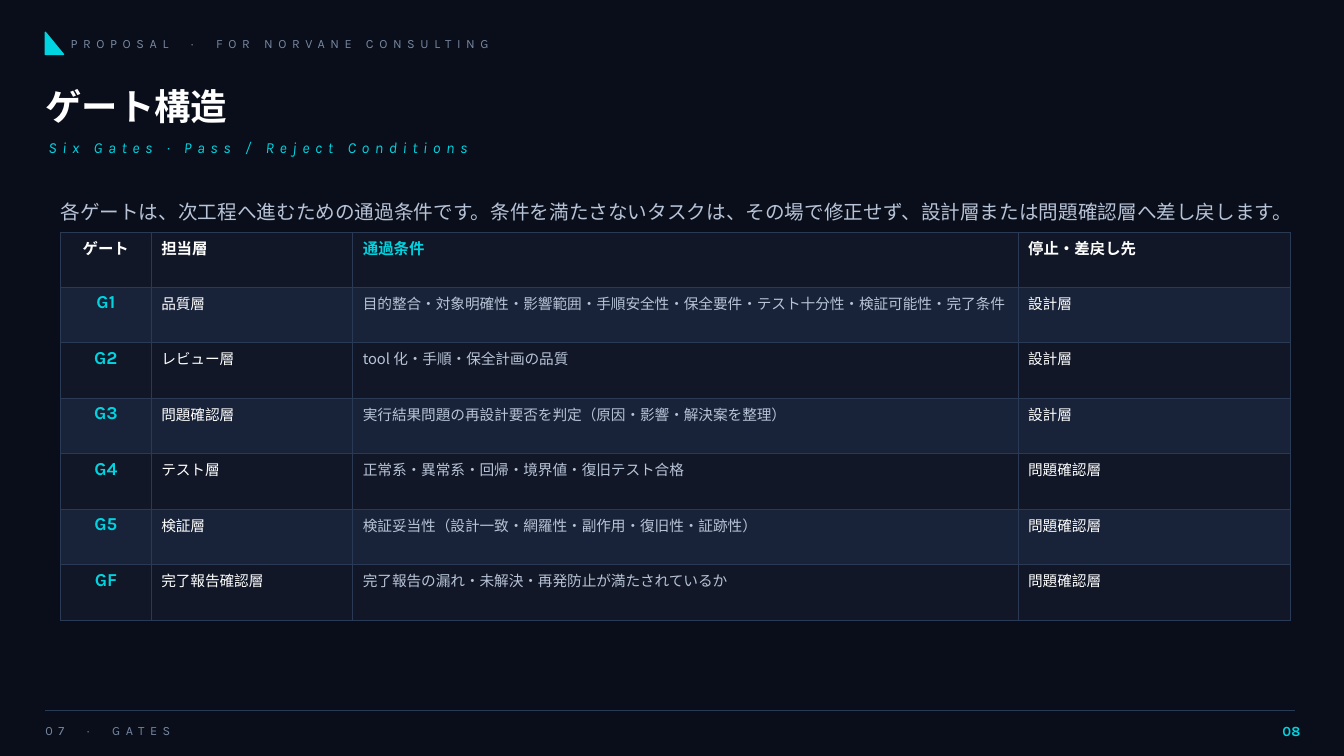
from dataclasses import dataclass, replace

from lxml.etree import SubElement
from pptx import Presentation
from pptx.dml.color import RGBColor
from pptx.enum.shapes import MSO_CONNECTOR, MSO_SHAPE
from pptx.enum.text import MSO_ANCHOR, MSO_AUTO_SIZE, PP_ALIGN
from pptx.oxml.ns import qn
from pptx.slide import Slide
from pptx.table import _Cell as Cell
from pptx.text.text import TextFrame, _Paragraph as Paragraph
from pptx.util import Pt

NIGHT = RGBColor(0x0A, 0x0E, 0x1A)
PANEL = RGBColor(0x11, 0x17, 0x26)
BAND = RGBColor(0x18, 0x22, 0x38)
RULE = RGBColor(0x2A, 0x3A, 0x55)
CYAN = RGBColor(0x00, 0xD4, 0xE0)
WHITE = RGBColor(0xFF, 0xFF, 0xFF)
MIST = RGBColor(0xB7, 0xC3, 0xD6)
SLATE = RGBColor(0x77, 0x87, 0xA0)

LATIN = "Karla"
CJK = "Noto Sans CJK JP"


@dataclass(frozen=True)
class Style:
    size: float
    font: str
    color: RGBColor
    bold: bool = False
    italic: bool = False
    spacing: float = 0
    align: PP_ALIGN = PP_ALIGN.LEFT


@dataclass(frozen=True)
class Label:
    text: str
    left: float
    top: float
    width: float
    height: float
    style: Style


KICKER = Style(9, LATIN, SLATE, spacing=4)
HEADER = Style(11, CJK, WHITE, bold=True)
BODY = Style(10.5, CJK, WHITE)
GATE = Style(13, LATIN, CYAN, bold=True, align=PP_ALIGN.CENTER)

TITLE = Label("ゲート構造", 32.4, 54, 864, 43.2, Style(26, CJK, WHITE, bold=True))
LABELS = [
    Label("PROPOSAL  ·  FOR NORVANE CONSULTING", 50.4, 19.44, 432, 23.04, KICKER),
    Label("Six Gates · Pass / Reject Conditions", 34.56, 93.6, 864, 23.04,
          Style(11, LATIN, CYAN, italic=True, spacing=4)),
    Label("各ゲートは、次工程へ進むための通過条件です。条件を満たさないタスクは、"
          "その場で修正せず、設計層または問題確認層へ差し戻します。",
          43.2, 133.2, 878.4, 36, Style(14, CJK, MIST)),
    Label("07  ·  GATES", 32.4, 511.2, 648, 21.6, KICKER),
    Label("08", 896.4, 511.2, 32.4, 21.6,
          Style(10, LATIN, CYAN, bold=True, align=PP_ALIGN.RIGHT)),
]

TABLE_LEFT, TABLE_TOP, ROW_HEIGHT = 43.2, 165.6, 39.6
COLUMN_WIDTHS = [64.8, 144, 475.2, 194.4]
HEADER_STYLES = [replace(HEADER, align=PP_ALIGN.CENTER), HEADER,
                 replace(HEADER, color=CYAN), HEADER]
BODY_STYLES = [GATE, BODY, replace(BODY, color=MIST), BODY]
ROWS = [
    ("ゲート", "担当層", "通過条件", "停止・差戻し先"),
    ("G1", "品質層",
     "目的整合・対象明確性・影響範囲・手順安全性・保全要件・テスト十分性・検証可能性・完了条件",
     "設計層"),
    ("G2", "レビュー層", "tool 化・手順・保全計画の品質", "設計層"),
    ("G3", "問題確認層", "実行結果問題の再設計要否を判定（原因・影響・解決案を整理）", "設計層"),
    ("G4", "テスト層", "正常系・異常系・回帰・境界値・復旧テスト合格", "問題確認層"),
    ("G5", "検証層", "検証妥当性（設計一致・網羅性・副作用・復旧性・証跡性）", "問題確認層"),
    ("GF", "完了報告確認層", "完了報告の漏れ・未解決・再発防止が満たされているか", "問題確認層"),
]


def write(p: Paragraph, text: str, style: Style) -> None:
    p.alignment = style.align
    r = p.add_run()
    r.text = text
    font = r.font
    font.size, font.name = Pt(style.size), style.font
    font.bold, font.italic = style.bold, style.italic
    font.color.rgb = style.color
    rPr = r._r.get_or_add_rPr()
    if style.spacing:
        rPr.set("spc", str(int(style.spacing * 100)))
    SubElement(rPr, qn("a:ea"), typeface=style.font)


def fill_frame(tf: TextFrame, label: Label) -> None:
    tf.word_wrap = True
    tf.auto_size = MSO_AUTO_SIZE.NONE
    tf.vertical_anchor = MSO_ANCHOR.MIDDLE
    tf.margin_left = tf.margin_top = tf.margin_right = tf.margin_bottom = 0
    write(tf.paragraphs[0], label.text, label.style)


def add_title(s: Slide, label: Label) -> None:
    sp = s.shapes.title
    sp.left, sp.top = Pt(label.left), Pt(label.top)
    sp.width, sp.height = Pt(label.width), Pt(label.height)
    fill_frame(sp.text_frame, label)


def add_label(s: Slide, label: Label) -> None:
    sp = s.shapes.add_textbox(Pt(label.left), Pt(label.top),
                              Pt(label.width), Pt(label.height))
    fill_frame(sp.text_frame, label)


def add_marker(s: Slide) -> None:
    sp = s.shapes.add_shape(MSO_SHAPE.RIGHT_TRIANGLE,
                            Pt(32.4), Pt(23.04), Pt(12.96), Pt(15.84))
    sp.shadow.inherit = False
    sp.fill.solid()
    sp.fill.fore_color.rgb = CYAN
    sp.line.color.rgb = CYAN
    sp.line.width = Pt(1)


def add_footer_rule(s: Slide) -> None:
    line = s.shapes.add_connector(MSO_CONNECTOR.STRAIGHT,
                                  Pt(32.4), Pt(507.6), Pt(925.2), Pt(507.6))
    line.line.color.rgb = RULE
    line.line.width = Pt(0.6)
    SubElement(line._element.spPr, qn("a:effectLst"))


def add_borders(cell: Cell) -> None:
    tcPr = cell._tc.get_or_add_tcPr()
    for side in ("lnL", "lnR", "lnT", "lnB"):
        ln = SubElement(tcPr, qn(f"a:{side}"), w=str(Pt(0.5)))
        SubElement(SubElement(ln, qn("a:solidFill")), qn("a:srgbClr"), val=str(RULE))


def add_gate_table(s: Slide) -> None:
    table = s.shapes.add_table(len(ROWS), len(COLUMN_WIDTHS), Pt(TABLE_LEFT), Pt(TABLE_TOP),
                               Pt(sum(COLUMN_WIDTHS)), Pt(ROW_HEIGHT * len(ROWS))).table
    table.horz_banding = False
    for column, width in zip(table.columns, COLUMN_WIDTHS):
        column.width = Pt(width)
    for i, texts in enumerate(ROWS):
        table.rows[i].height = Pt(ROW_HEIGHT)
        styles = BODY_STYLES if i else HEADER_STYLES
        for j, (text, style) in enumerate(zip(texts, styles)):
            cell = table.cell(i, j)
            add_borders(cell)
            cell.fill.solid()
            cell.fill.fore_color.rgb = BAND if i % 2 else PANEL
            write(cell.text_frame.paragraphs[0], text, style)


def main() -> None:
    prs = Presentation()
    prs.slide_width, prs.slide_height = Pt(960), Pt(540)
    s = prs.slides.add_slide(prs.slide_layouts[5])
    s.background.fill.solid()
    s.background.fill.fore_color.rgb = NIGHT
    add_marker(s)
    add_title(s, TITLE)
    for label in LABELS:
        add_label(s, label)
    add_gate_table(s)
    add_footer_rule(s)
    prs.save("out.pptx")


if __name__ == "__main__":
    main()
